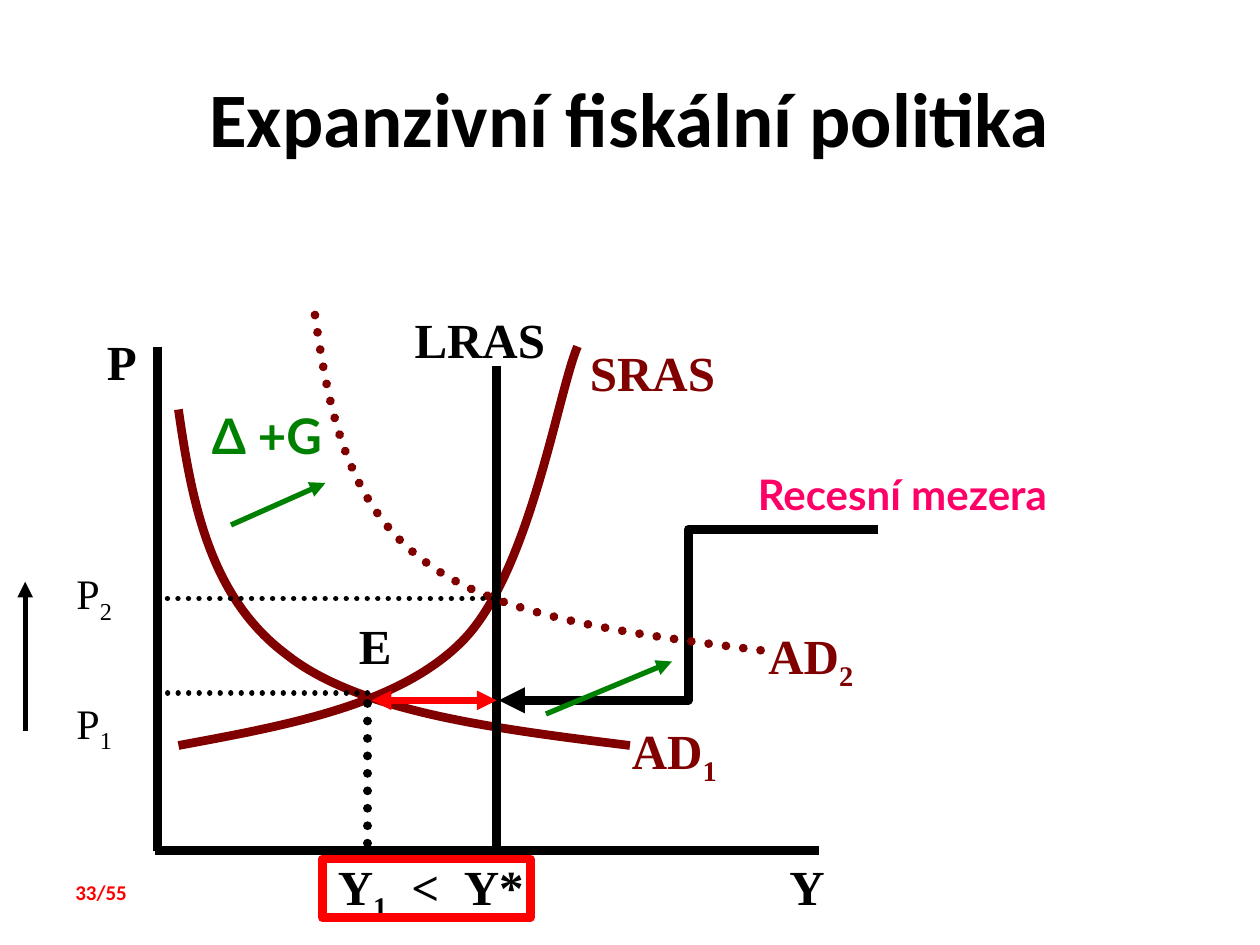
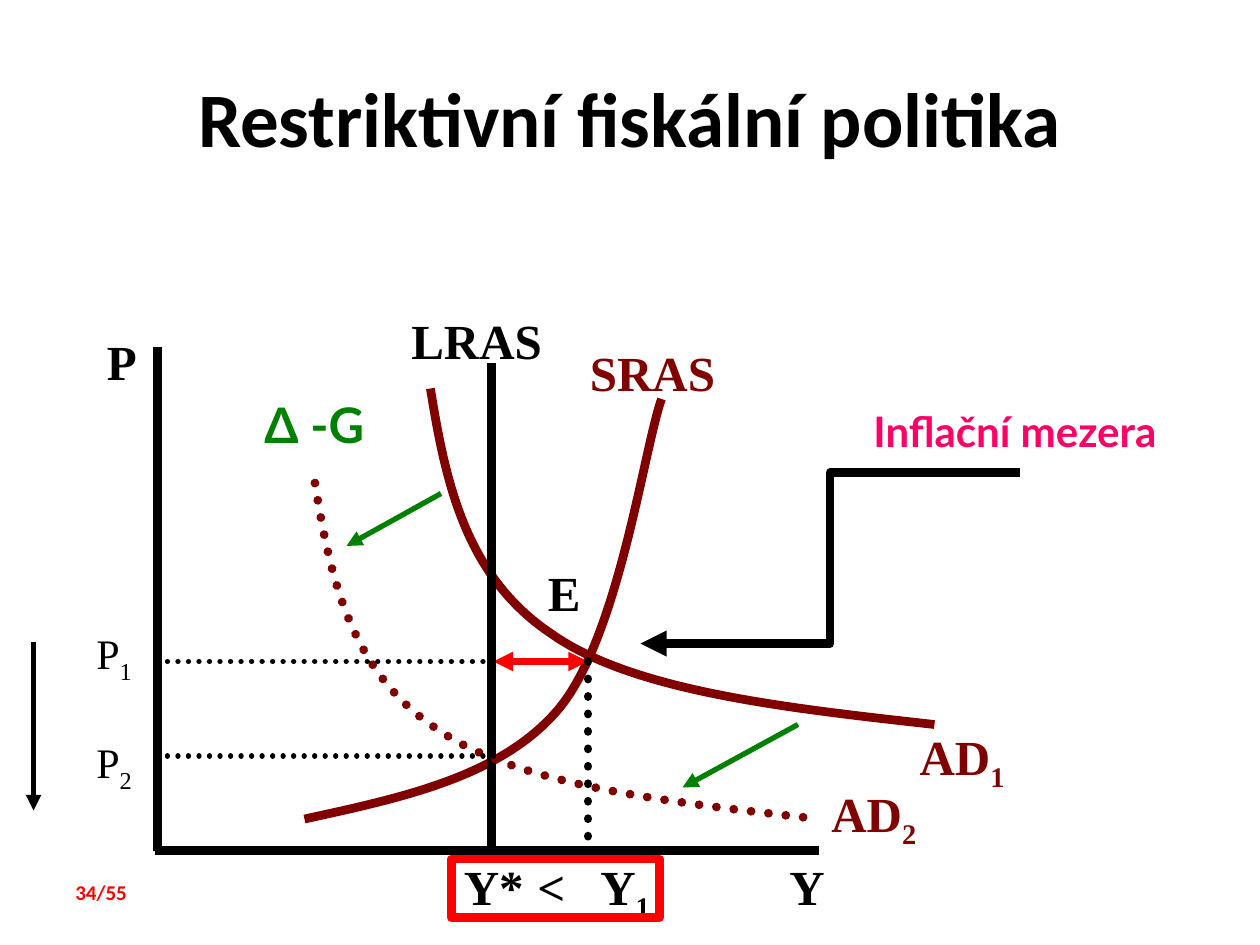
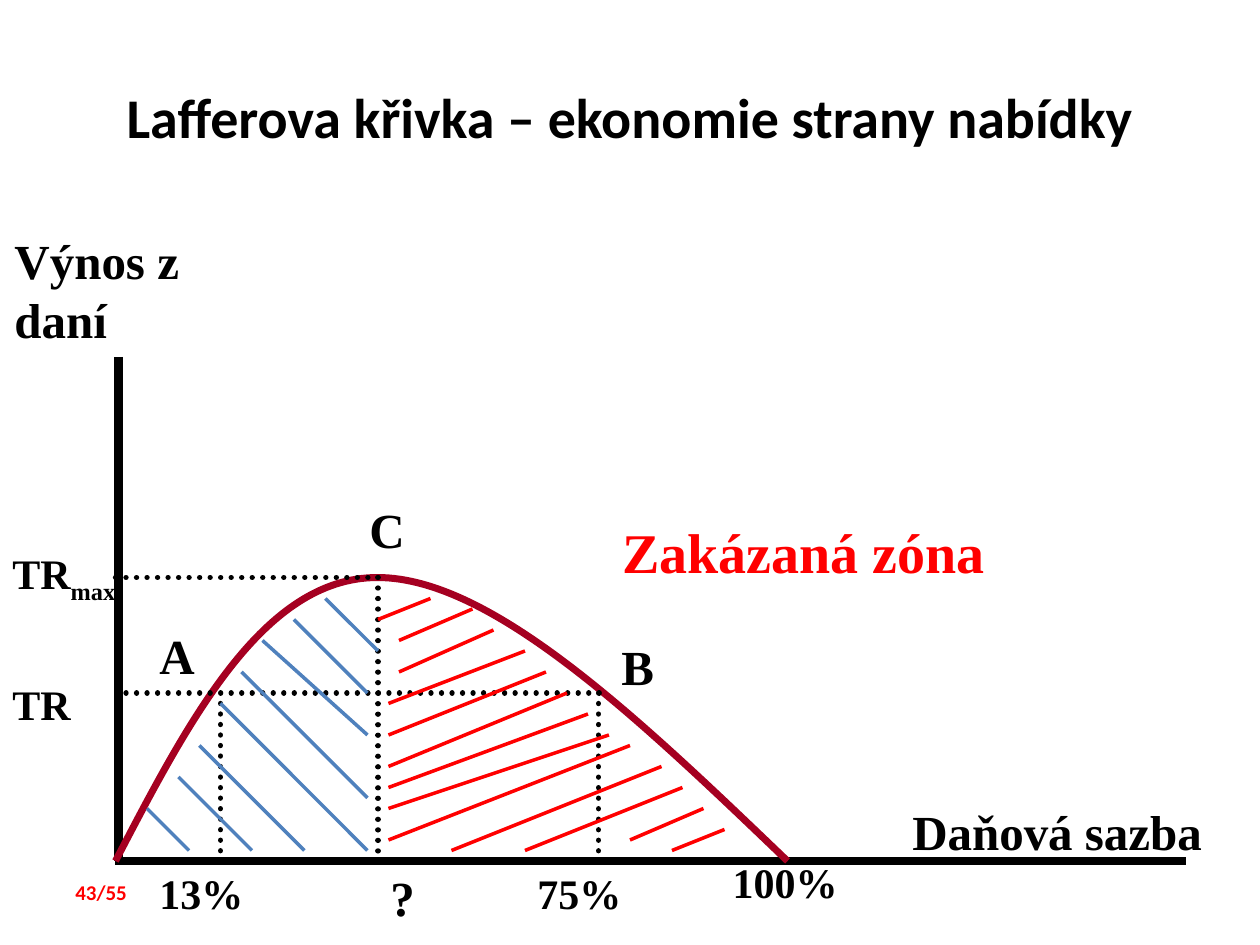
from dataclasses import dataclass
from functools import singledispatch

from lxml.etree import SubElement
from pptx import Presentation
from pptx.dml.color import RGBColor
from pptx.enum.dml import MSO_LINE
from pptx.enum.shapes import MSO_CONNECTOR as Wire, MSO_SHAPE
from pptx.enum.text import MSO_ANCHOR, MSO_AUTO_SIZE as AutoSize, PP_ALIGN
from pptx.oxml.ns import qn
from pptx.oxml.xmlchemy import OxmlElement
from pptx.util import Inches, Pt

WIDTH, HEIGHT = Inches(10), Inches(7.5)
COLUMNS, ROWS = 120, 90
SERIF, SANS, LATO = "Times New Roman", "Calibri", "Lato"
COLORS = {
    "black": "000000",
    "maroon": "800000",
    "crimson": "A50021",
    "red": "FF0000",
    "pink": "FF0066",
    "green": "008000",
    "blue": "4F81BD",
}
AD_SHARES = [(0, 0), (0.03, 0.28), (0.07, 0.56), (0.24, 0.73), (0.4, 0.9), (0.7, 0.95), (1, 1)]
SRAS_SHARES = [(0, 1), (0.27, 0.95), (0.55, 0.9), (0.71, 0.74), (0.88, 0.57), (0.95, 0.12), (1, 0)]
LAFFER_SHARES = [(0, 1), (0.11, 0.5), (0.22, 0), (0.39, 0), (0.56, 0), (0.78, 0.5), (1, 1)]


@dataclass
class Label:
    text: str
    column: float
    row: float
    columns: float = 8
    color: str = "black"
    size: int = 28
    font: str = SERIF
    bold: bool = True
    lines: int = 1


@dataclass
class Line:
    start: tuple
    end: tuple
    color: str = "black"
    weight: float = 5
    dotted: bool = False
    heads: str = ""
    kind: Wire = Wire.STRAIGHT


@dataclass
class Curve:
    shares: list
    column: float
    row: float
    columns: float
    rows: float
    color: str = "maroon"
    weight: float = 5
    dotted: bool = False


@dataclass
class Frame:
    column: float
    row: float
    columns: float = 19.8
    rows: float = 5.6


@dataclass
class Diagram:
    title: str
    number: str
    marks: list
    title_size: int = 44


def across(columns: float) -> int:
    return round(columns * WIDTH / COLUMNS)


def down(rows: float) -> int:
    return round(rows * HEIGHT / ROWS)


def rgb(color: str) -> RGBColor:
    return RGBColor.from_string(COLORS[color])


def style_font(font, name: str, size: int, color: str, bold: bool) -> None:
    font.name, font.size, font.bold = name, Pt(size), bold
    font.color.rgb = rgb(color)


def style_line(line, color: str, weight: float, dotted: bool = False, heads: str = "") -> None:
    line.color.rgb = rgb(color)
    line.width = Pt(weight)
    stroke = line._get_or_add_ln()
    if dotted:
        line.dash_style = MSO_LINE.ROUND_DOT
        stroke.set("cap", "rnd")
    for tag in heads.split():
        SubElement(stroke, qn(f"a:{tag}End"), type="triangle")


@singledispatch
def draw(mark, page) -> None:
    raise TypeError(mark)


@draw.register
def draw_label(mark: Label, page) -> None:
    rows = mark.lines * mark.size / 5 + 1.2
    box = page.shapes.add_textbox(
        across(mark.column), down(mark.row), across(mark.columns), down(rows))
    frame = box.text_frame
    frame.word_wrap = True
    frame.auto_size = AutoSize.SHAPE_TO_FIT_TEXT
    base, _, subscript = mark.text.partition("_")
    para = frame.paragraphs[0]
    para.text = base
    if subscript:
        para.add_run().text = subscript
    for span in para.runs:
        style_font(span.font, mark.font, mark.size, mark.color, mark.bold)
    if subscript:
        para.runs[-1].font._element.set("baseline", "-25000")


@draw.register
def draw_line(mark: Line, page) -> None:
    (left, top), (right, bottom) = mark.start, mark.end
    wire = page.shapes.add_connector(
        mark.kind, across(left), down(top), across(right), down(bottom))
    style_line(wire.line, mark.color, mark.weight, mark.dotted, mark.heads)
    SubElement(wire._element.spPr, qn("a:effectLst"))


@draw.register
def draw_curve(mark: Curve, page) -> None:
    points = [(across(mark.column + x * mark.columns), down(mark.row + y * mark.rows))
              for x, y in mark.shares]
    builder = page.shapes.build_freeform(*points[0])
    builder.add_line_segments(points[1:], close=False)
    shape = builder.convert_to_shape()
    segments = list(shape._element.iter(qn("a:lnTo")))
    for first in range(0, len(segments), 3):
        bezier = OxmlElement("a:cubicBezTo")
        segments[first].addprevious(bezier)
        for segment in segments[first:first + 3]:
            bezier.append(segment[0])
            segment.getparent().remove(segment)
    shape.shadow.inherit = False
    shape.fill.background()
    style_line(shape.line, mark.color, mark.weight, mark.dotted)


@draw.register
def draw_frame(mark: Frame, page) -> None:
    shape = page.shapes.add_shape(
        MSO_SHAPE.RECTANGLE, across(mark.column), down(mark.row),
        across(mark.columns), down(mark.rows))
    shape.shadow.inherit = False
    shape.fill.background()
    style_line(shape.line, "red", 5)


def dots(start: tuple, end: tuple, weight: float = 3) -> Line:
    return Line(start, end, weight=weight, dotted=True)


def arrow(start: tuple, end: tuple, color: str = "green") -> Line:
    return Line(start, end, color, 3, heads="tail")


def gap_arrow(start: tuple, end: tuple) -> Line:
    return Line(start, end, "red", 3.75, heads="head tail")


def gap_pointer(column: float, row: float) -> Line:
    return Line((column, row), (column - 36.1, row + 16.3), heads="tail", kind=Wire.ELBOW)


def price(text: str, column: float, row: float) -> Label:
    return Label(text, column, row, 8.5, size=24, bold=False)


def tick(text: str, column: float, row: float) -> Label:
    return Label(text, column, row, 14, size=24)


def hatch(color: str, strokes: list) -> list:
    return [Line((left, top), (right, bottom), color, 2) for left, top, right, bottom in strokes]


MARKET_AXES = [
    Label("P", 9, 31),
    Label("Y", 74, 81),
    Line((15, 33), (15, 81), weight=5.5),
    Line((14.8, 81), (78, 81)),
    Label("SRAS", 55, 32, 18, "maroon"),
    Label("Y*", 43, 81, 11),
]

EXPANSION = MARKET_AXES + [
    Curve(AD_SHARES, 17, 39, 43, 32),
    Label("AD_1", 59, 68, 14, "maroon"),
    Curve(SRAS_SHARES, 17, 33, 38, 38),
    Line((47.3, 81), (47.3, 34.9)),
    Label("LRAS", 38.3, 28.9, 18),
    Label("Recesní mezera", 71, 44, 38, "pink", 24, LATO),
    Label("E", 33, 58),
    gap_arrow((35.4, 66.7), (47.3, 66.7)),
    gap_pointer(83.6, 50.4),
    dots((35, 67), (35, 81), 5),
    Label("Y_1", 31, 81),
    Label("<", 38, 81, 6),
    Frame(30.7, 81.8),
    Curve(AD_SHARES, 30, 30, 43, 32, dotted=True),
    Label("AD_2", 72, 59, 14, "maroon"),
    dots((35, 66), (15, 66)),
    dots((47, 57), (15, 57)),
    arrow((22, 50), (31, 46)),
    arrow((52, 68), (64, 63)),
    Label("Δ +G", 19, 38, 16, "green", font=LATO),
    price("P_1", 6.1, 65.8),
    price("P_2", 6.1, 53.5),
    arrow((2.4, 69.6), (2.4, 55.4), "black"),
]

RESTRICTION = MARKET_AXES + [
    Curve(AD_SHARES, 41, 37, 48, 32),
    Label("AD_1", 86.4, 68.6, 14, "maroon"),
    Curve(SRAS_SHARES, 29, 38, 34, 40),
    Line((46.8, 81), (46.8, 34.6)),
    Label("LRAS", 38, 29, 18),
    Label("Inflační mezera", 82, 38, 38, "pink", 24, LATO),
    Label("E", 51, 53),
    gap_pointer(97.1, 45),
    Label("Y_1", 56, 81),
    Label("<", 50, 81, 6),
    gap_arrow((56, 63), (47, 63)),
    dots((56, 63), (56, 81), 5),
    Frame(43, 81.8),
    Curve(AD_SHARES, 30, 46, 48, 32, dotted=True),
    Label("AD_2", 78, 74, 14, "maroon"),
    dots((47, 63), (15, 63)),
    dots((47, 72), (15, 72)),
    arrow((42, 47), (33, 52)),
    arrow((76, 69), (65, 75)),
    Label("Δ -G", 24, 37, 16, "green", font=LATO),
    price("P_2", 8, 69.6),
    price("P_1", 8, 59.2),
    arrow((3.2, 61.1), (3.2, 77.2), "black"),
]

LAFFER = [
    Line((11.3, 34), (11.3, 82), weight=5.5),
    Line((11, 82), (113, 82)),
    Label("Výnos z daní", 0.2, 21.4, 21, lines=2),
    Curve(LAFFER_SHARES, 11, 55, 64, 27, "crimson", 4),
    Label("Daňová sazba", 85.7, 75.7, 33),
    Label("?", 36, 82, 7),
    dots((36, 55), (36, 82)),
    dots((12, 66), (58, 66)),
    Label("C", 34, 47),
    Label("A", 14, 59),
    Label("B", 58, 60),
    dots((11, 55), (36, 55)),
    dots((21, 67), (21, 82)),
    dots((57, 66), (57, 82)),
    tick("75%", 50, 82),
    tick("13%", 14, 82),
    *hatch("blue", [
        (14, 77, 18, 81), (17, 74, 24, 81), (19, 71, 29, 81), (21, 67, 35, 81),
        (23, 64, 35, 76), (25, 61, 35, 70), (28, 59, 35, 66), (31, 57, 36, 62),
    ]),
    *hatch("red", [
        (41, 57, 36, 59), (45, 58, 38, 61), (47, 60, 38, 64), (50, 62, 37, 67),
        (52, 64, 37, 70), (54, 66, 37, 73), (56, 68, 37, 75), (58, 70, 37, 77),
        (60, 71, 37, 80), (63, 73, 43, 81), (65, 75, 50, 81), (67, 77, 60, 80),
        (69, 79, 64, 81),
    ]),
    tick("TR", 0, 64),
    tick("TR_max", 0, 51.6),
    tick("100%", 68.6, 81),
    Label("Zakázaná zóna", 58.1, 48.7, 45.4, "red", 32),
]

DIAGRAMS = [
    Diagram("Expanzivní fiskální politika", "33/55", EXPANSION),
    Diagram("Restriktivní fiskální politika", "34/55", RESTRICTION),
    Diagram("Lafferova křivka – ekonomie strany nabídky", "43/55", LAFFER, 32),
]


def set_title(page, text: str, size: int) -> None:
    title = page.shapes.title
    title.left, title.top = across(6), down(3.6)
    title.width, title.height = across(108), down(15)
    frame = title.text_frame
    frame.text = text
    frame.word_wrap = True
    frame.auto_size = AutoSize.NONE
    frame.vertical_anchor = MSO_ANCHOR.MIDDLE
    para = frame.paragraphs[0]
    para.alignment = PP_ALIGN.CENTER
    style_font(para.runs[0].font, SANS, size, "black", True)


def main() -> None:
    deck = Presentation()
    deck.slide_width, deck.slide_height = WIDTH, HEIGHT
    for diagram in DIAGRAMS:
        page = deck.slides.add_slide(deck.slide_layouts[5])
        set_title(page, diagram.title, diagram.title_size)
        number = Label(diagram.number, 6, 83.2, 11, "red", 12, SANS)
        for mark in [*diagram.marks, number]:
            draw(mark, page)
    deck.save("out.pptx")


if __name__ == "__main__":
    main()
